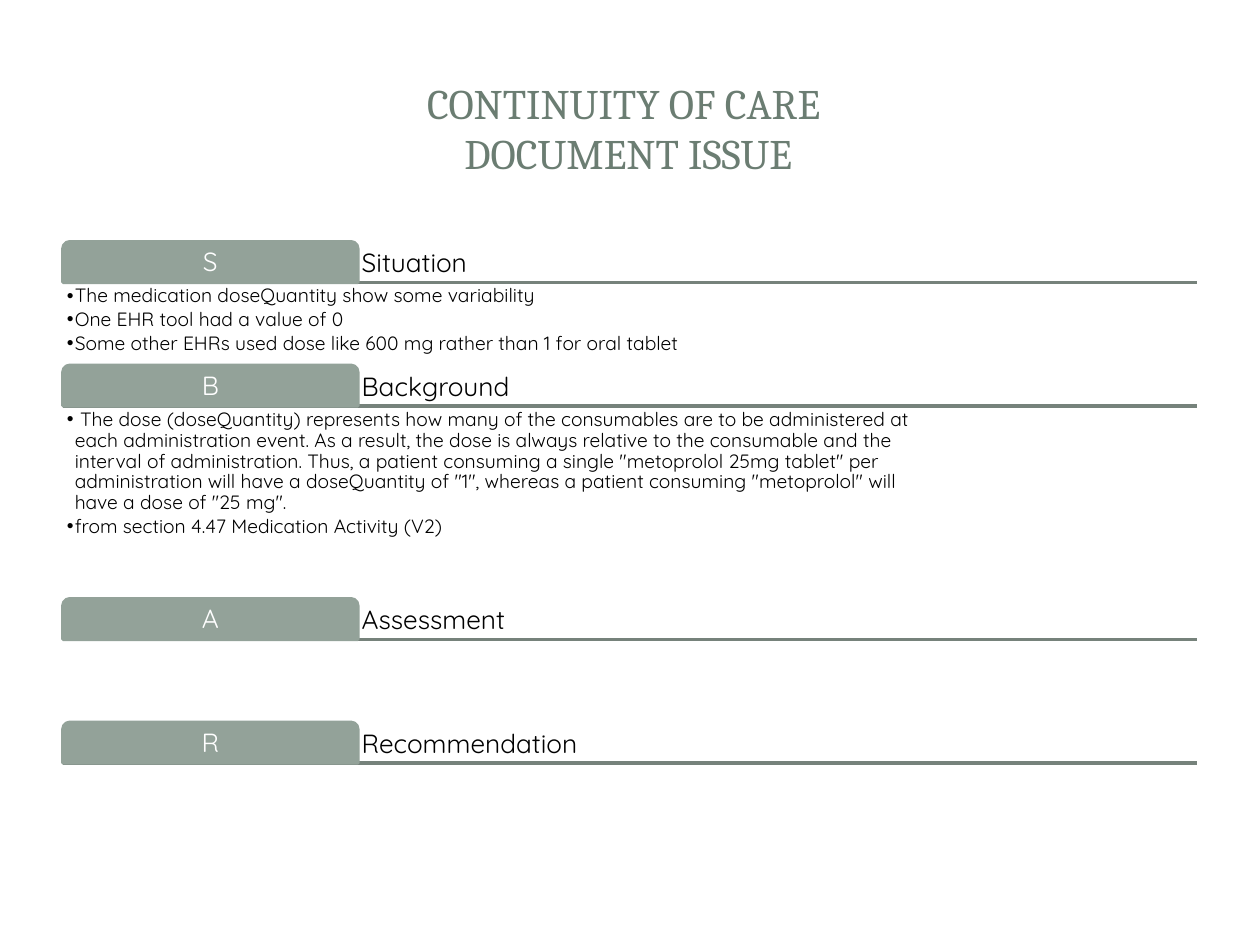
from lxml import etree
from pptx import Presentation
from pptx.dml.color import RGBColor
from pptx.enum import shapes, text
from pptx.oxml.ns import qn
from pptx.util import Pt

SAGE = RGBColor(0x93, 0xA2, 0x99)
RULE_GREY = RGBColor(0x76, 0x82, 0x7B)
TITLE_GREEN = RGBColor(0x6B, 0x7D, 0x72)
BLACK = RGBColor(0, 0, 0)
WHITE = RGBColor(0xFF, 0xFF, 0xFF)

LEFT, WIDTH = 36, 648
TAB_WIDTH, TAB_HEIGHT = 168.5, 23.2
INSET = 2.2


def place(shape, left, top, width, height):
    shape.left, shape.top = Pt(left), Pt(top)
    shape.width, shape.height = Pt(width), Pt(height)


def format_text(frame, size, color, anchor, align, font="Quicksand", inset=INSET,
                spacing=0.9, after=0):
    frame.word_wrap = True
    frame.auto_size = text.MSO_AUTO_SIZE.NONE
    frame.vertical_anchor = anchor
    frame.margin_left = frame.margin_right = Pt(inset)
    frame.margin_top = frame.margin_bottom = Pt(inset)
    for paragraph in frame.paragraphs:
        paragraph.alignment = align
        paragraph.line_spacing = spacing
        paragraph.space_before, paragraph.space_after = Pt(0), Pt(after)
        for run in paragraph.runs:
            run.font.size, run.font.name = Pt(size), font
            run.font.color.rgb = color


# Section headings with their top edges
sections = [("Situation", 138.2), ("Background", 208.8),
            ("Assessment", 342.2), ("Recommendation", 412.8)]

# Bullet lists: top, height, items
lists = [
    (161.4, 46, [
        "The medication doseQuantity show some variability",
        "One EHR tool had a value of 0",
        "Some other EHRs used dose like 600 mg rather than 1 for oral tablet",
    ]),
    (232, 109.4, [
        " The dose (doseQuantity) represents how many of the consumables are to be administered at\v"
        "each administration event. As a result, the dose is always relative to the consumable and the\v"
        "interval of administration. Thus, a patient consuming a single \"metoprolol 25mg tablet\" per\v"
        "administration will have a doseQuantity of \"1\", whereas a patient consuming \"metoprolol\" will\v"
        "have a dose of \"25 mg\".",
        "from section 4.47 Medication Activity (V2)",
    ]),
]

deck = Presentation()
deck.slide_width, deck.slide_height = Pt(720), Pt(540)
slide = deck.slides.add_slide(deck.slide_layouts[3])  # title and two bodies

# Title
title = slide.shapes.title
place(title, 34, 32, 650, 82)
title.text_frame.text = "CONTINUITY OF CARE \vDOCUMENT ISSUE"
format_text(title.text_frame, 24, TITLE_GREEN, text.MSO_ANCHOR.MIDDLE,
            text.PP_ALIGN.CENTER, font="Cambria", inset=3.6, spacing=1.0)

# Bullet lists under the first two headings
bodies = list(slide.placeholders)[1:]
for body, (top, height, items) in zip(bodies, lists):
    place(body, LEFT, top, WIDTH, height)
    body.text_frame.text = "\n".join(items)
    format_text(body.text_frame, 11, BLACK, text.MSO_ANCHOR.TOP,
                text.PP_ALIGN.LEFT, after=1.65)
    for paragraph in body.text_frame.paragraphs:
        properties = paragraph._p.get_or_add_pPr()
        properties.set("marL", str(Pt(4.5)))
        properties.set("indent", str(-Pt(4.5)))
        etree.SubElement(properties, qn("a:buChar")).set("char", "•")

# Section rows: rule, lettered tab, heading
for name, top in sections:
    bottom = top + TAB_HEIGHT
    rule = slide.shapes.add_connector(shapes.MSO_CONNECTOR.STRAIGHT, Pt(LEFT), Pt(bottom),
                                      Pt(LEFT + WIDTH), Pt(bottom))
    rule.line.color.rgb, rule.line.width = RULE_GREY, Pt(2)
    etree.SubElement(rule._element.spPr, qn("a:effectLst"))

    tab = slide.shapes.add_shape(shapes.MSO_SHAPE.ROUND_2_SAME_RECTANGLE, Pt(LEFT), Pt(top),
                                 Pt(TAB_WIDTH), Pt(TAB_HEIGHT))
    tab.shadow.inherit = False
    tab.fill.solid()
    tab.fill.fore_color.rgb = SAGE
    tab.line.color.rgb, tab.line.width = SAGE, Pt(2)
    tab.text_frame.text = name[0]
    format_text(tab.text_frame, 15, WHITE, text.MSO_ANCHOR.MIDDLE, text.PP_ALIGN.CENTER)

    heading = slide.shapes.add_textbox(Pt(LEFT + TAB_WIDTH), Pt(top),
                                       Pt(WIDTH - TAB_WIDTH), Pt(TAB_HEIGHT))
    heading.text_frame.text = name
    format_text(heading.text_frame, 15, BLACK, text.MSO_ANCHOR.BOTTOM, text.PP_ALIGN.LEFT)

deck.save("out.pptx")
